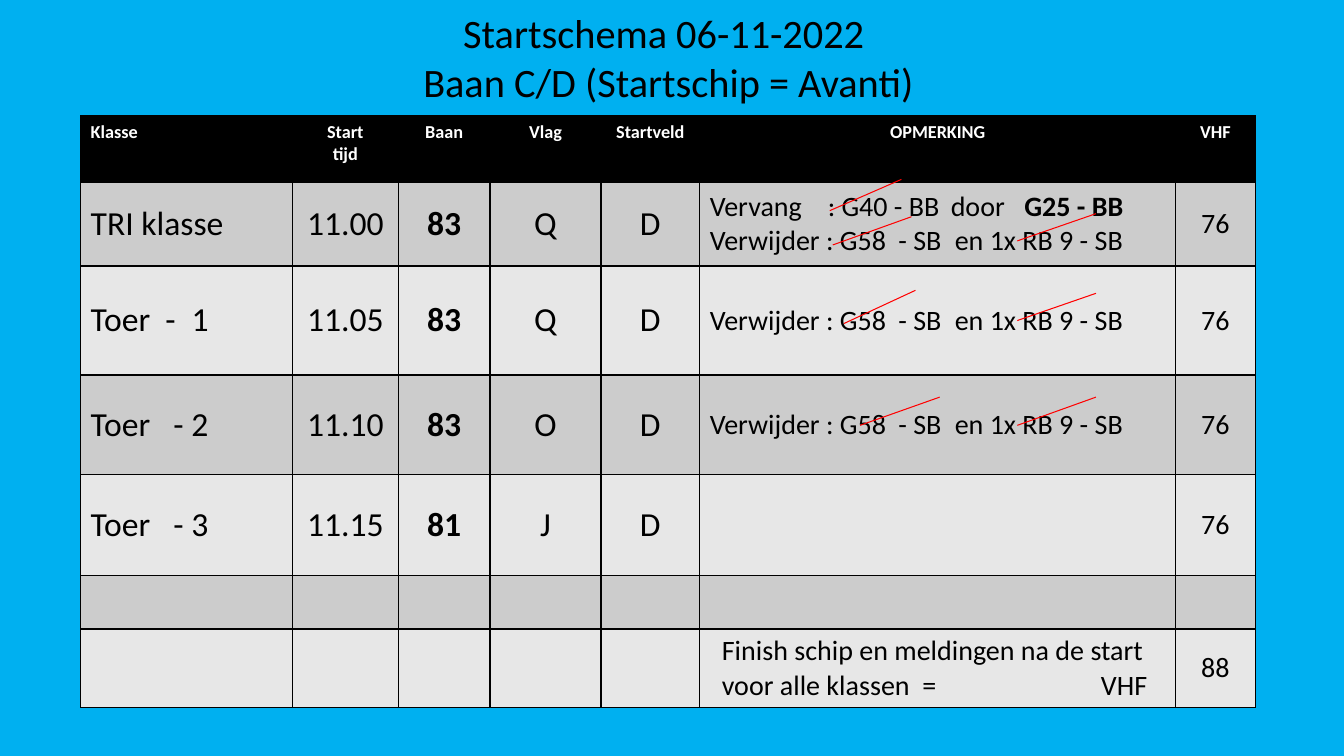
from dataclasses import dataclass

from lxml.etree import SubElement
from pptx import Presentation
from pptx.dml.color import RGBColor
from pptx.enum.shapes import MSO_CONNECTOR
from pptx.enum.text import MSO_ANCHOR, MSO_AUTO_SIZE, PP_ALIGN
from pptx.oxml.ns import qn
from pptx.util import Inches, Pt


@dataclass(frozen=True)
class Theme:
    font: str = "Calibri"
    background: str = "00B0F0"
    ink: str = "000000"
    header_ink: str = "FFFFFF"
    bands: tuple = ("CCCCCC", "E7E7E7")
    strike: str = "FF0000"
    title_size: float = 28.8
    header_size: float = 13
    entry_size: float = 24
    remark_size: float = 20
    border_width: float = 1
    strike_width: float = 0.75


def apply(target, values):
    for name, value in values.items():
        setattr(target, name, value)


class SlideBuilder:
    def __init__(self, deck, theme):
        self.theme = theme
        self.slide = deck.slides.add_slide(deck.slide_layouts[5])
        self.fill(self.slide.background, theme.background)

    def fill(self, target, color):
        target.fill.solid()
        target.fill.fore_color.rgb = RGBColor.from_string(color)

    def add_text(self, para, text, size, color, bold=False):
        """Add a span; a vertical tab in the text becomes a line break."""
        for index, line in enumerate(text.split("\v")):
            if index:
                para.add_line_break()
            span = para.add_run()
            span.text = line
            apply(span.font, {"name": self.theme.font, "size": Pt(size), "bold": bold})
            span.font.color.rgb = RGBColor.from_string(color)

    def tab_stops(self, para, stops):
        tabs = SubElement(para._p.get_or_add_pPr(), qn("a:tabLst"))
        for stop in stops:
            SubElement(tabs, qn("a:tab"), pos=str(Inches(stop)), algn="l")

    def title(self, text, left, top, width, height):
        box = self.slide.shapes.title
        apply(box, {"left": Inches(left), "top": Inches(top),
                    "width": Inches(width), "height": Inches(height)})
        apply(box.text_frame, {"word_wrap": True, "auto_size": MSO_AUTO_SIZE.NONE,
                               "vertical_anchor": MSO_ANCHOR.MIDDLE})
        para = box.text_frame.paragraphs[0]
        para.alignment = PP_ALIGN.CENTER
        self.add_text(para, text, self.theme.title_size, self.theme.ink)

    def table(self, left, top, widths, heights):
        table = self.slide.shapes.add_table(
            len(heights), len(widths), Inches(left), Inches(top),
            Inches(sum(widths)), Inches(sum(heights))).table
        for column, width in zip(table.columns, widths):
            column.width = Inches(width)
        for row, height in zip(table.rows, heights):
            row.height = Inches(height)
        return table

    def borders(self, cell):
        properties = cell._tc.get_or_add_tcPr()
        for side in ("lnL", "lnR", "lnT", "lnB"):
            line = SubElement(properties, qn(f"a:{side}"),
                              w=str(Pt(self.theme.border_width)))
            solid = SubElement(line, qn("a:solidFill"))
            SubElement(solid, qn("a:srgbClr"), val=self.theme.ink)

    def cell(self, cell, paragraphs, fill, anchor, align, size, color):
        """Each paragraph is (spans, tab stops); each span is (text, bold)."""
        self.borders(cell)
        self.fill(cell, fill)
        cell.vertical_anchor = anchor
        frame = cell.text_frame
        for index, (spans, stops) in enumerate(paragraphs):
            para = frame.add_paragraph() if index else frame.paragraphs[0]
            para.alignment = align
            if stops:
                self.tab_stops(para, stops)
            for text, bold in spans:
                self.add_text(para, text, size, color, bold)

    def strike(self, start_x, start_y, end_x, end_y):
        line = self.slide.shapes.add_connector(
            MSO_CONNECTOR.STRAIGHT, *map(Inches, (start_x, start_y, end_x, end_y)))
        line.line.width = Pt(self.theme.strike_width)
        line.line.color.rgb = RGBColor.from_string(self.theme.strike)
        SubElement(line._element.spPr, qn("a:effectLst"))


WIDTHS = (2.1, 1.05, 0.91, 1.1, 0.98, 4.72, 0.79)
HEIGHTS = (0.66, 0.83, 1.08, 0.99, 1, 0.53, 0.75)
CLASS_COLUMN, COURSE_COLUMN, REMARK_COLUMN, VHF_COLUMN = 0, 2, 5, 6
HEADERS = ("Klasse", "Start\ntijd", "Baan", "Vlag", "Startveld", "OPMERKING", "VHF")

# Remarks: paragraphs of spans with their tab stops
REPLACE = ([("Vervang\t: G40 - BB\tdoor\t", False), ("G25 - BB", True)],
           (1.17, 2.39, 3.12))
REMOVE = ([("Verwijder : G58\t- SB\ten 1x RB 9 - SB", False)], (1.87, 2.43))
FINISH = ([("Finish schip en meldingen na de start voor alle klassen  =\tVHF", False)],
          (3.76,))
FINISH_MARGIN = 0.22

# Class, its tab stops, start time, course, flag, start field, remarks, VHF
STARTS = (
    ("TRI klasse", (), "11.00", "83", "Q", "D", [REPLACE, REMOVE], "76"),
    ("Toer\t-\t1", (0.74, 1), "11.05", "83", "Q", "D", [REMOVE], "76"),
    ("Toer\t- 2", (0.82,), "11.10", "83", "O", "D", [REMOVE], "76"),
    ("Toer\t- 3", (0.82,), "11.15", "81", "J", "D", [], "76"),
    ("", (), "", "", "", "", [], ""),
    ("", (), "", "", "", "", [FINISH], "88"),
)

STRIKES = (
    (8.23, 2.09, 8.94, 1.78), (8.37, 3.21, 9.08, 2.88),
    (10.09, 2.39, 10.87, 2.12), (8.53, 4.22, 9.32, 3.94),
    (10.09, 4.22, 10.87, 3.94), (10.09, 3.18, 10.87, 2.91),
    (8.26, 2.43, 9.04, 2.15),
)


def main():
    deck = Presentation()
    apply(deck, {"slide_width": Inches(13.33), "slide_height": Inches(7.5)})
    theme = Theme()
    page = SlideBuilder(deck, theme)

    # Title
    page.title("Startschema 06-11-2022 \vBaan C/D (Startschip = Avanti)",
               2.13, 0.02, 9, 1.09)

    # Table header
    table = page.table(0.8, 1.15, WIDTHS, HEIGHTS)
    for column, header in enumerate(HEADERS):
        align = PP_ALIGN.LEFT if column == CLASS_COLUMN else PP_ALIGN.CENTER
        page.cell(table.cell(0, column),
                  [([(line, True)], ()) for line in header.split("\n")],
                  theme.ink, MSO_ANCHOR.TOP, align, theme.header_size, theme.header_ink)

    # Table rows
    for row, (name, stops, *values) in enumerate(STARTS, start=1):
        for column, value in enumerate((name, *values)):
            if column == REMARK_COLUMN:
                paragraphs = value
            else:
                tabs = stops if column == CLASS_COLUMN else ()
                paragraphs = [([(value, column == COURSE_COLUMN)], tabs)] if value else []
            left = column in (CLASS_COLUMN, REMARK_COLUMN)
            small = column in (REMARK_COLUMN, VHF_COLUMN)
            page.cell(table.cell(row, column), paragraphs, theme.bands[(row - 1) % 2],
                      MSO_ANCHOR.MIDDLE, PP_ALIGN.LEFT if left else PP_ALIGN.CENTER,
                      theme.remark_size if small else theme.entry_size, theme.ink)
    table.cell(len(STARTS), REMARK_COLUMN).margin_left = Inches(FINISH_MARGIN)

    # Red strikes through the buoys
    for ends in STRIKES:
        page.strike(*ends)

    deck.save("out.pptx")


if __name__ == "__main__":
    main()
